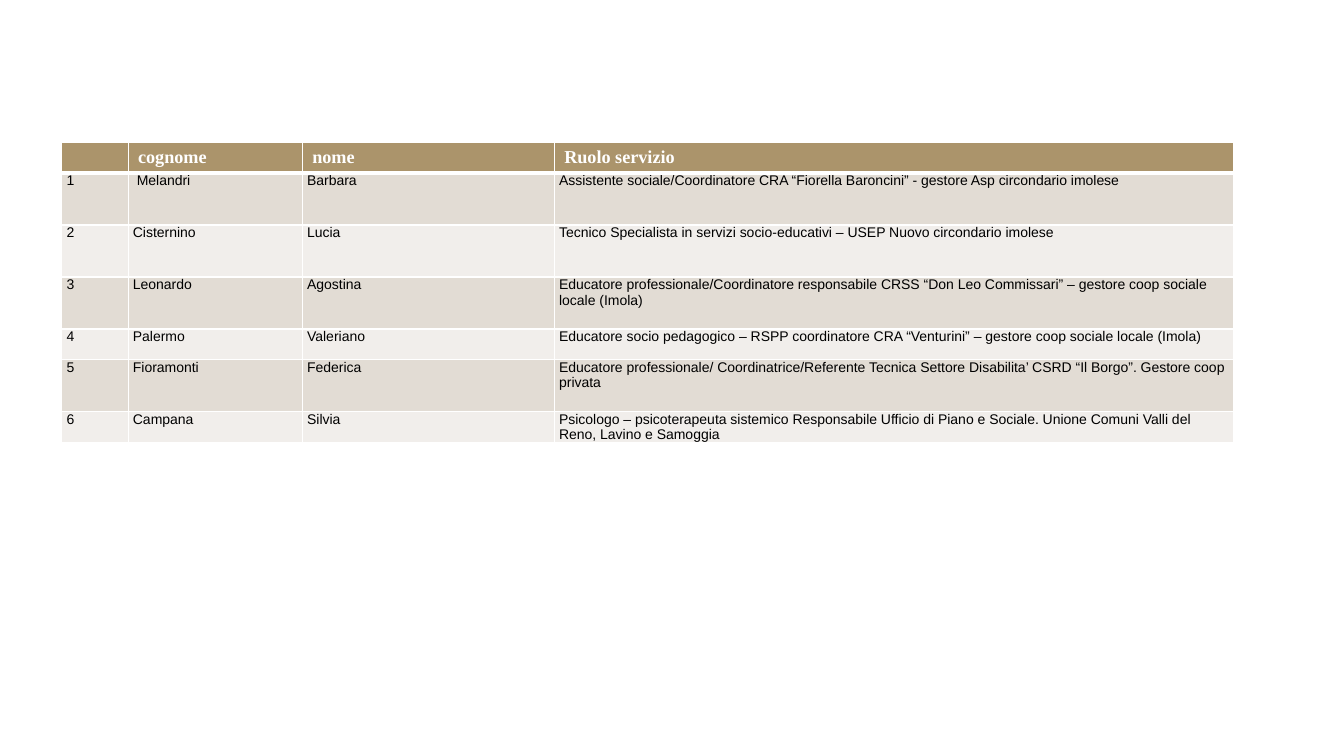
from dataclasses import dataclass

from lxml import etree
from pptx import Presentation
from pptx import util as u
from pptx.dml.color import RGBColor
from pptx.oxml import ns
from pptx.table import _Cell


@dataclass(frozen=True)
class CellStyle:
    font: str
    size: float
    bold: bool
    color: str
    fills: tuple[str, ...]
    margin_x: float
    margin_y: float
    bottom_line: float


@dataclass(frozen=True)
class Member:
    surname: str
    name: str
    role: str
    height: float


WHITE = "FFFFFF"
HEADER = CellStyle("Times New Roman", 13, True, WHITE, ("AB946B",), 0.25, 0.13, 3)
BODY = CellStyle("Arial", 10, False, "000000", ("E2DCD4", "F1EEEB"), 0.12, 0, 1)
LOW, TALL = 0.77, 1.31
COLUMN_WIDTHS = (1.67, 4.39, 6.35, 17.13)
TITLES = ("", "cognome", "nome", "Ruolo servizio")
MEMBERS = (
    Member(" Melandri", "Barbara",
           "Assistente sociale/Coordinatore CRA “Fiorella Baroncini” - gestore Asp circondario imolese", TALL),
    Member("Cisternino", "Lucia",
           "Tecnico Specialista in servizi socio-educativi – USEP Nuovo circondario imolese", TALL),
    Member("Leonardo", "Agostina",
           "Educatore professionale/Coordinatore responsabile CRSS “Don Leo Commissari” – "
           "gestore coop sociale locale (Imola)", TALL),
    Member("Palermo", "Valeriano",
           "Educatore socio pedagogico – RSPP coordinatore CRA “Venturini” – "
           "gestore coop sociale locale (Imola)", LOW),
    Member("Fioramonti", "Federica",
           "Educatore professionale/ Coordinatrice/Referente Tecnica Settore Disabilita’ "
           "CSRD “Il Borgo”. Gestore coop privata", TALL),
    Member("Campana", "Silvia",
           "Psicologo – psicoterapeuta sistemico Responsabile Ufficio di Piano e Sociale. "
           "Unione Comuni Valli del Reno, Lavino e Samoggia", LOW),
)


def rgb(value: str) -> RGBColor:
    return RGBColor.from_string(value)


def add_border(cell: _Cell, side: str, width: float) -> None:
    tc_pr = cell._tc.get_or_add_tcPr()
    line = etree.SubElement(tc_pr, ns.qn(f"a:ln{side}"), w=str(u.Pt(width)))
    fill = etree.SubElement(line, ns.qn("a:solidFill"))
    etree.SubElement(fill, ns.qn("a:srgbClr"), val=WHITE)


def fill_cell(cell: _Cell, value: str, style: CellStyle, fill: str, top_line: float) -> None:
    for side, width in (("L", 1), ("R", 1), ("T", top_line), ("B", style.bottom_line)):
        add_border(cell, side, width)
    cell.fill.solid()
    cell.fill.fore_color.rgb = rgb(fill)
    cell.margin_left = cell.margin_right = u.Cm(style.margin_x)
    cell.margin_top = cell.margin_bottom = u.Cm(style.margin_y if value else 0)
    p = cell.text_frame.paragraphs[0]
    p.font.name = style.font
    p.font.size = u.Pt(style.size)
    p.font.bold = style.bold
    p.font.color.rgb = rgb(style.color)
    if value:
        p.add_run().text = value


def main() -> None:
    prs = Presentation()
    prs.slide_width, prs.slide_height = u.Cm(33.87), u.Cm(19.05)
    s = prs.slides.add_slide(prs.slide_layouts[6])

    rows = [(TITLES, LOW, HEADER)]
    rows += [((str(i), m.surname, m.name, m.role), m.height, BODY) for i, m in enumerate(MEMBERS, 1)]
    width, height = sum(COLUMN_WIDTHS), sum(row[1] for row in rows)
    table = s.shapes.add_table(
        len(rows), len(COLUMN_WIDTHS), u.Cm(1.56), u.Cm(3.59), u.Cm(width), u.Cm(height)
    ).table
    table.first_row = table.horz_banding = False

    for column, column_width in zip(table.columns, COLUMN_WIDTHS):
        column.width = u.Cm(column_width)
    top_line = 1
    for i, (values, row_height, style) in enumerate(rows):
        table.rows[i].height = u.Cm(row_height)
        fill = style.fills[(i - 1) % len(style.fills)]
        for j, value in enumerate(values):
            fill_cell(table.cell(i, j), value, style, fill, top_line)
        top_line = style.bottom_line

    prs.save("out.pptx")


if __name__ == "__main__":
    main()
